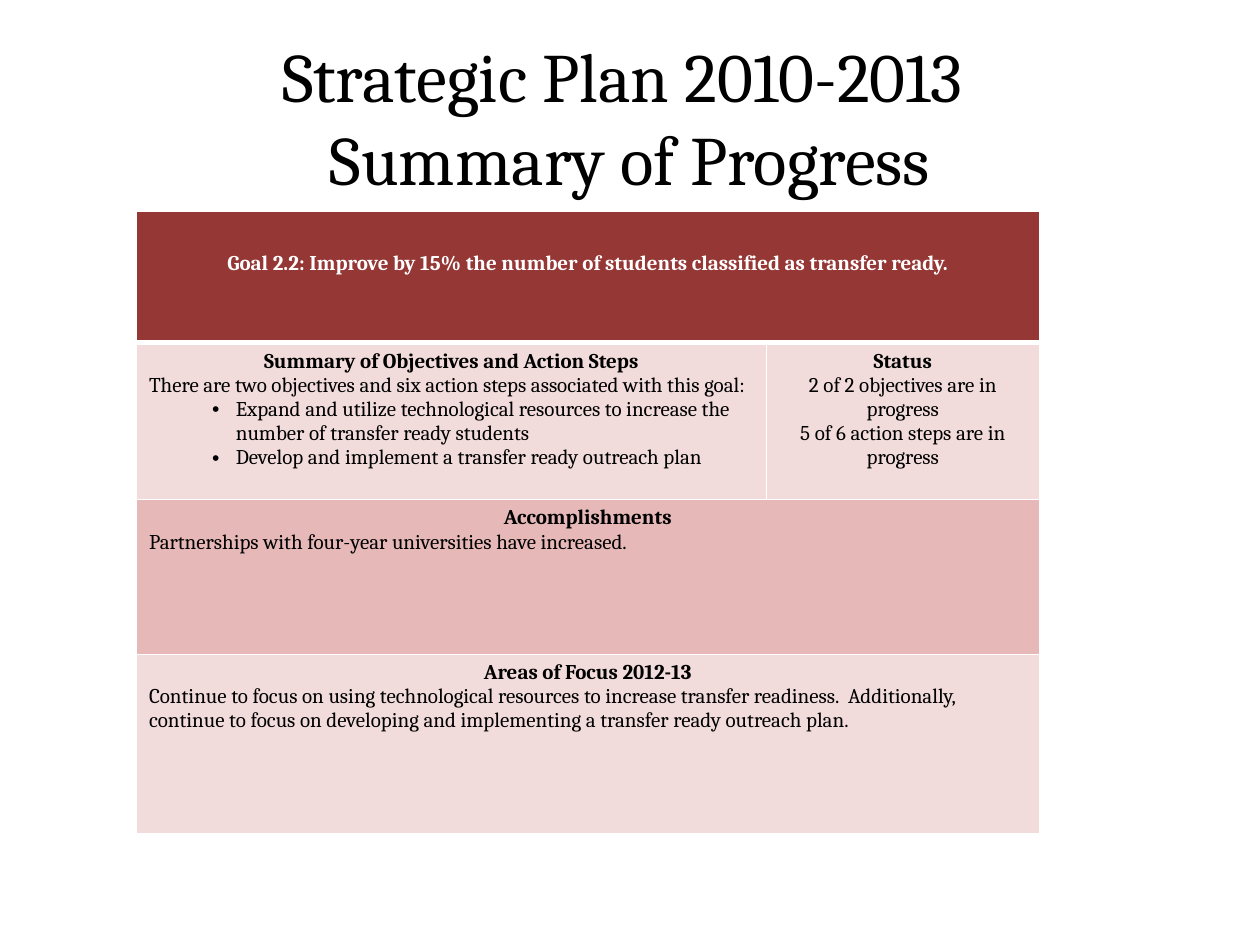
from dataclasses import dataclass

from lxml.etree import SubElement
from pptx import Presentation
from pptx.dml.color import RGBColor
from pptx.enum.text import MSO_ANCHOR, MSO_AUTO_SIZE, PP_ALIGN as Align
from pptx.oxml.ns import qn
from pptx.table import Table, _Cell as Cell
from pptx.util import Cm, Length, Pt

FONT = "Cambria"
BLACK = RGBColor(0x00, 0x00, 0x00)
WHITE = RGBColor(0xFF, 0xFF, 0xFF)
DARK_RED = RGBColor(0x95, 0x37, 0x35)
ROSE = RGBColor(0xE6, 0xB9, 0xB8)
PALE_ROSE = RGBColor(0xF2, 0xDC, 0xDB)
COLUMN_WIDTHS = (Cm(12.7), Cm(5.5))
ROW_HEIGHTS = (Cm(2.66), Cm(3.16), Cm(3.12), Cm(3.61))


@dataclass(frozen=True)
class Line:
    text: str
    align: Align = Align.LEFT
    bold: bool = False
    bullet: bool = False


@dataclass(frozen=True)
class Section:
    row: int
    column: int
    lines: tuple[Line, ...]
    fill: RGBColor = PALE_ROSE
    color: RGBColor = BLACK
    full_width: bool = False
    top_margin: Length = Cm(0.13)
    bottom_border: Length = Pt(1)


def heading(text: str) -> Line:
    return Line(text, Align.CENTER, bold=True)


SECTIONS = (
    Section(0, 0, (
        heading("Goal 2.2: Improve by 15% the number of students classified as transfer ready."),
    ), DARK_RED, WHITE, full_width=True, top_margin=Cm(0.83), bottom_border=Pt(3)),
    Section(1, 0, (
        heading("Summary of Objectives and Action Steps"),
        Line("There are two objectives and six action steps associated with this goal:"),
        Line("Expand and utilize technological resources to increase the number of "
             "transfer ready students", bullet=True),
        Line("Develop and implement a transfer ready outreach plan", bullet=True),
    )),
    Section(1, 1, (
        heading("Status"),
        Line("2 of 2 objectives are in progress", Align.CENTER),
        Line("5 of 6 action steps are in progress", Align.CENTER),
    )),
    Section(2, 0, (
        heading("Accomplishments"),
        Line("Partnerships with four-year universities have increased."),
    ), ROSE, full_width=True),
    Section(3, 0, (
        heading("Areas of Focus 2012-13"),
        Line("Continue to focus on using technological resources to increase transfer "
             "readiness.  Additionally, continue to focus on developing and implementing "
             "a transfer ready outreach plan."),
    ), full_width=True),
)


def style_cell(cell: Cell, section: Section) -> None:
    properties = cell._tc.get_or_add_tcPr()
    for side in ("L", "R", "T", "B"):
        width = section.bottom_border if side == "B" else Pt(1)
        border = SubElement(properties, qn(f"a:ln{side}"), w=str(width))
        border_fill = SubElement(border, qn("a:solidFill"))
        SubElement(border_fill, qn("a:srgbClr"), val=str(WHITE))
    cell.fill.solid()
    cell.fill.fore_color.rgb = section.fill
    cell.margin_top = section.top_margin


def write_lines(cell: Cell, section: Section) -> None:
    cell.text_frame.text = "\n".join(line.text for line in section.lines)
    for paragraph, line in zip(cell.text_frame.paragraphs, section.lines):
        paragraph.alignment = line.align
        if line.bullet:
            paragraph.level = 1
            properties = paragraph._p.get_or_add_pPr()
            properties.set("marL", str(Cm(1.75)))
            properties.set("indent", str(-Cm(0.48)))
            SubElement(properties, qn("a:buFont"), typeface="Arial")
            SubElement(properties, qn("a:buChar"), char="•")
        for run in paragraph.runs:
            run.font.name = FONT
            run.font.size = Pt(12)
            run.font.bold = line.bold
            run.font.color.rgb = section.color


def add_section(table: Table, section: Section) -> None:
    cell = table.cell(section.row, section.column)
    style_cell(cell, section)
    if section.full_width:
        last_cell = table.cell(section.row, len(COLUMN_WIDTHS) - 1)
        style_cell(last_cell, section)
        cell.merge(last_cell)
    write_lines(cell, section)


def main() -> None:
    deck = Presentation()
    deck.slide_width, deck.slide_height = Cm(25.4), Cm(19.05)
    slide = deck.slides.add_slide(deck.slide_layouts[5])

    title = slide.shapes.title
    title.left, title.top, title.width, title.height = Cm(1.27), Cm(0.76), Cm(22.86), Cm(3.18)
    title.text_frame.text = "Strategic Plan 2010-2013 \vSummary of Progress"
    title.text_frame.auto_size = MSO_AUTO_SIZE.NONE
    title.text_frame.vertical_anchor = MSO_ANCHOR.MIDDLE
    title_paragraph = title.text_frame.paragraphs[0]
    title_paragraph.alignment = Align.CENTER
    for run in title_paragraph.runs:
        run.font.name = FONT
        run.font.size = Pt(39.6)
        run.font.color.rgb = BLACK

    progress = slide.shapes.add_table(
        len(ROW_HEIGHTS), len(COLUMN_WIDTHS), Cm(2.75), Cm(4.25),
        sum(COLUMN_WIDTHS), sum(ROW_HEIGHTS)).table
    for column, width in zip(progress.columns, COLUMN_WIDTHS):
        column.width = width
    for row, height in zip(progress.rows, ROW_HEIGHTS):
        row.height = height
    for section in SECTIONS:
        add_section(progress, section)

    deck.save("out.pptx")


if __name__ == "__main__":
    main()
